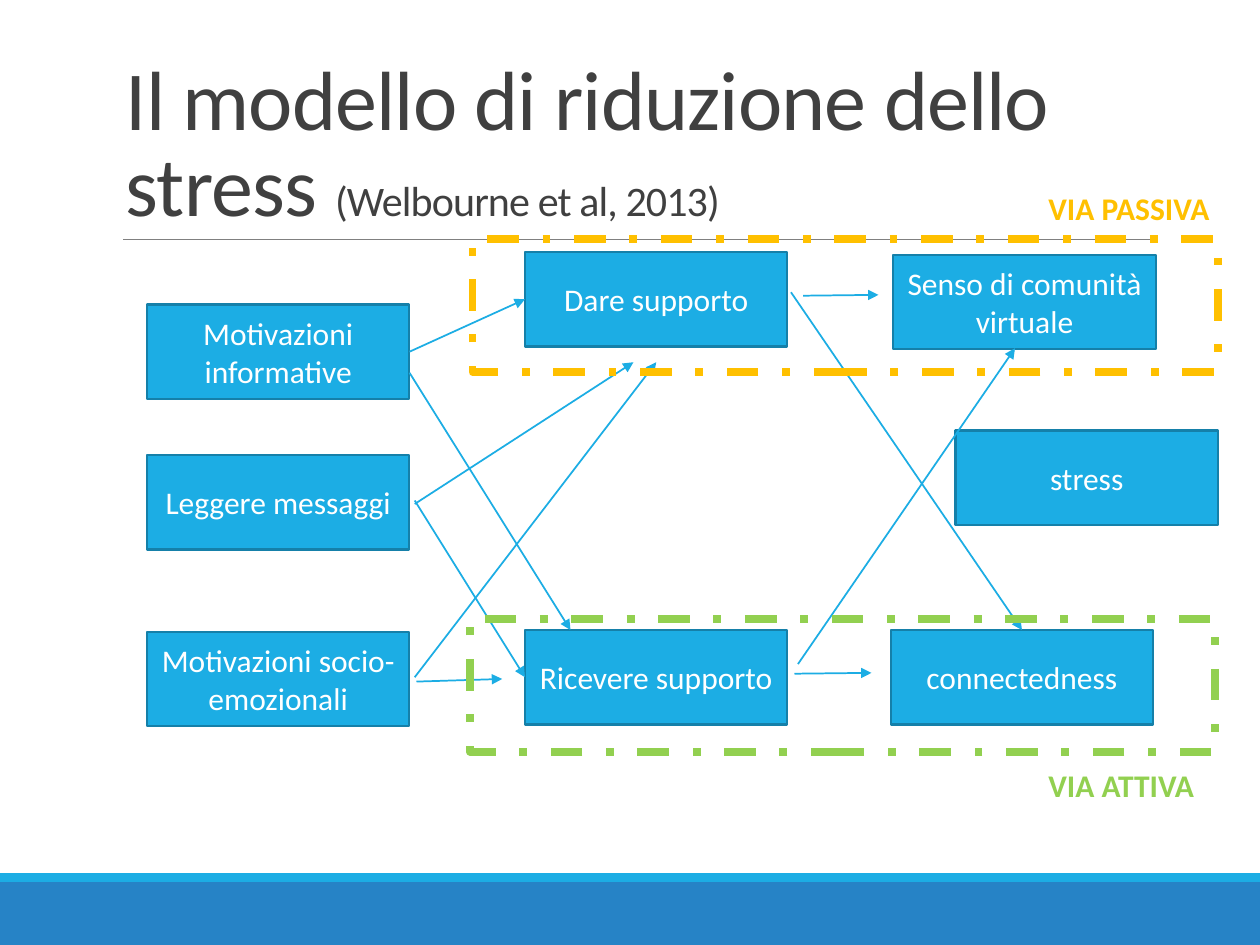
"""Draw the stress reduction model as a slide of boxes, arrows and frames."""
from typing import NamedTuple

import lxml.etree
import pptx
import pptx.dml.color
import pptx.enum.dml
import pptx.enum.shapes
import pptx.enum.text
import pptx.oxml.ns
import pptx.util

Pt = pptx.util.Pt
qn = pptx.oxml.ns.qn
Align = pptx.enum.text.PP_ALIGN
Anchor = pptx.enum.text.MSO_ANCHOR
Fit = pptx.enum.text.MSO_AUTO_SIZE
Dash = pptx.enum.dml.MSO_LINE

CYAN, BLUE, EDGE = "1CADE4", "2683C6", "1580A9"
GOLD, GREEN, WHITE, DARK, GREY = "FFC000", "92D050", "FFFFFF", "404040", "808080"
WIDTH, HEIGHT = 150, 54


class Area(NamedTuple):
    x: float
    y: float
    w: float
    h: float


class Box(NamedTuple):
    text: str
    x: float
    y: float


class Arrow(NamedTuple):
    x1: float
    y1: float
    x2: float
    y2: float


class Route(NamedTuple):
    text: str
    hue: str
    frame: Area
    label: Area


BOXES = [
    Box("Motivazioni informative", 84, 174),
    Box("Leggere messaggi", 84, 260),
    Box("Motivazioni socio-emozionali", 84, 361),
    Box("Dare supporto", 300, 144),
    Box("Senso di comunità virtuale", 510.5, 145.5),
    Box("stress", 546, 246),
    Box("Ricevere supporto", 300, 360),
    Box("connectedness", 509, 360),
]
ARROWS = [
    Arrow(234, 201, 300, 171),
    Arrow(237, 288, 362, 207),
    Arrow(237, 387, 375, 207),
    Arrow(234, 213, 326, 360),
    Arrow(237, 286, 300, 387),
    Arrow(452, 167, 584, 360),
    Arrow(238, 389.5, 287, 388),
    Arrow(456, 379.5, 580, 199),
    Arrow(454, 385, 498, 384.5),
    Arrow(459, 169, 502, 168.5),
]
ROUTES = [
    Route("VIA PASSIVA", GOLD, Area(270, 136.5, 426, 76), Area(592, 104.5, 112, 29)),
    Route("VIA ATTIVA", GREEN, Area(268.5, 353.5, 426, 76), Area(592, 434, 103, 29)),
]


def shade(hue: str) -> pptx.dml.color.RGBColor:
    return pptx.dml.color.RGBColor.from_string(hue)


def apply(thing, looks: dict) -> None:
    for name, value in looks.items():
        setattr(thing, name, value)


def write(para, text: str, size: float, hue: str, bold: bool = False):
    run = para.add_run()
    run.text = text
    apply(run.font, {"name": "Calibri", "size": Pt(size), "bold": bold})
    run.font.color.rgb = shade(hue)
    return run


def block(slide, area: Area, fill: str = "", edge: str = "", width: float = 0):
    kind = pptx.enum.shapes.MSO_SHAPE.RECTANGLE
    shape = slide.shapes.add_shape(kind, *map(Pt, area))
    shape.shadow.inherit = False
    if fill:
        shape.fill.solid()
        shape.fill.fore_color.rgb = shade(fill)
    else:
        shape.fill.background()
    if edge:
        shape.line.color.rgb = shade(edge)
        shape.line.width = Pt(width)
    else:
        shape.line.fill.background()
    return shape


def link(slide, ends: Arrow, hue: str, width: float, head: bool = True) -> None:
    kind = pptx.enum.shapes.MSO_CONNECTOR.STRAIGHT
    line = slide.shapes.add_connector(kind, *map(Pt, ends))
    line.line.color.rgb = shade(hue)
    line.line.width = Pt(width)
    props = line._element.spPr
    if head:
        lxml.etree.SubElement(props.find(qn("a:ln")), qn("a:tailEnd"), type="triangle")
    lxml.etree.SubElement(props, qn("a:effectLst"))


def title(slide) -> None:
    frame = slide.shapes.add_textbox(*map(Pt, Area(64.8, 22.5, 594, 114.5))).text_frame
    apply(frame, {"word_wrap": True, "vertical_anchor": Anchor.BOTTOM})
    para = frame.paragraphs[0]
    para.line_spacing = 0.85
    parts = [("Il modello di riduzione dello stress ", 48), ("(Welbourne et al, 2013)", 24)]
    for text, size in parts:
        run = write(para, text, size, DARK)
        run._r.get_or_add_rPr().set("spc", "-50")


def node(slide, box: Box) -> None:
    area = Area(box.x, box.y, WIDTH, HEIGHT)
    frame = block(slide, area, CYAN, EDGE, 1.25).text_frame
    apply(frame, {"word_wrap": True, "vertical_anchor": Anchor.MIDDLE})
    para = frame.paragraphs[0]
    para.alignment = Align.CENTER
    write(para, box.text, 18, WHITE)


def label(slide, route: Route) -> None:
    frame = slide.shapes.add_textbox(*map(Pt, route.label)).text_frame
    apply(frame, {"word_wrap": False, "auto_size": Fit.SHAPE_TO_FIT_TEXT})
    write(frame.paragraphs[0], route.text, 18, route.hue, True)


def main() -> None:
    deck = pptx.Presentation()
    apply(deck, {"slide_width": Pt(720), "slide_height": Pt(540)})
    slide = deck.slides.add_slide(deck.slide_layouts[6])
    block(slide, Area(0, 504, 720, 36), BLUE)
    block(slide, Area(0, 499, 720, 5), CYAN)
    link(slide, Arrow(70.5, 136.8, 659, 136.8), GREY, 0.5, False)
    title(slide)
    for box in BOXES:
        node(slide, box)
    for ends in ARROWS:
        link(slide, ends, CYAN, 1)
    for route in ROUTES:
        block(slide, route.frame, "", route.hue, 4.5).line.dash_style = Dash.DASH_DOT
    for route in ROUTES:
        label(slide, route)
    deck.save("out.pptx")


if __name__ == "__main__":
    main()
